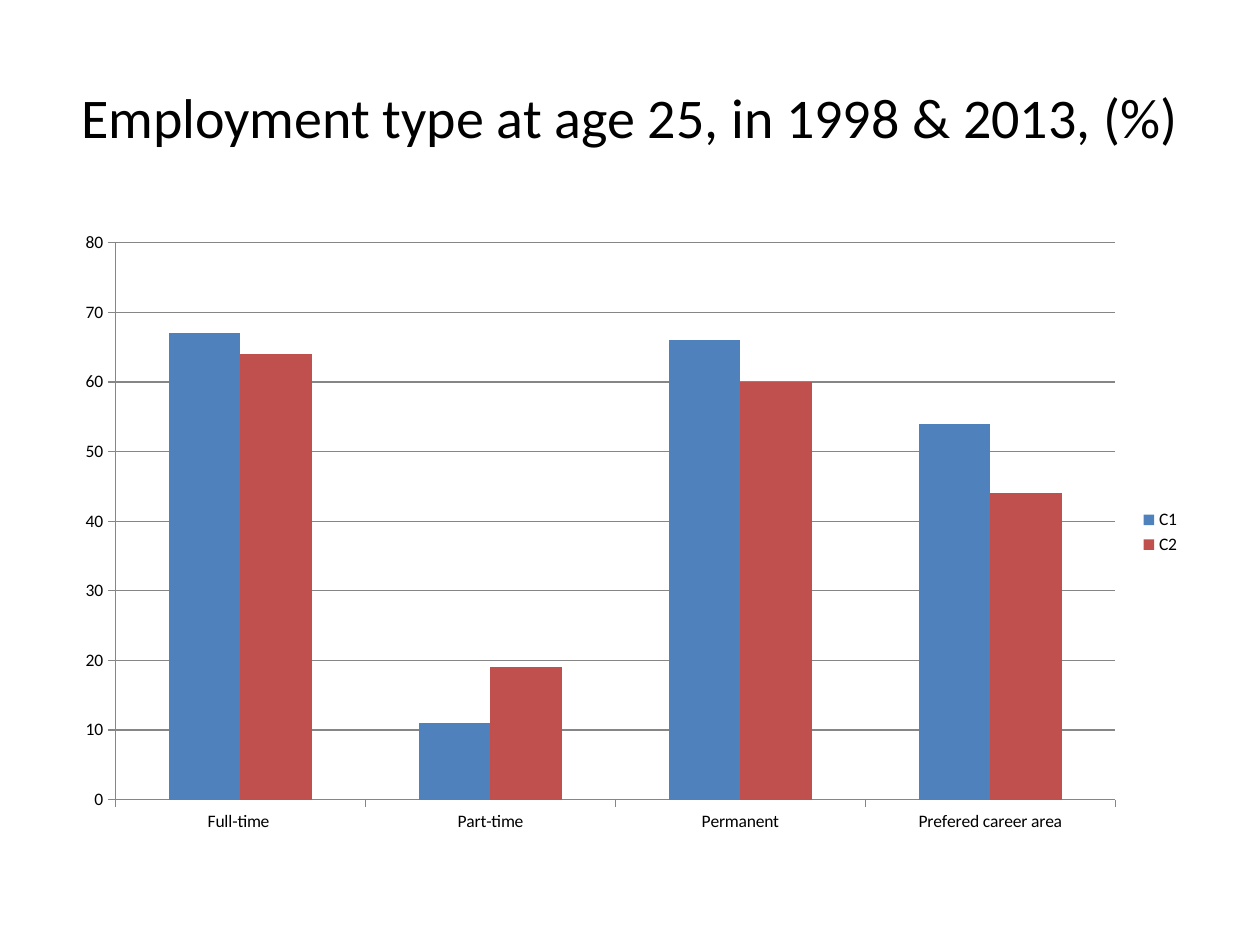
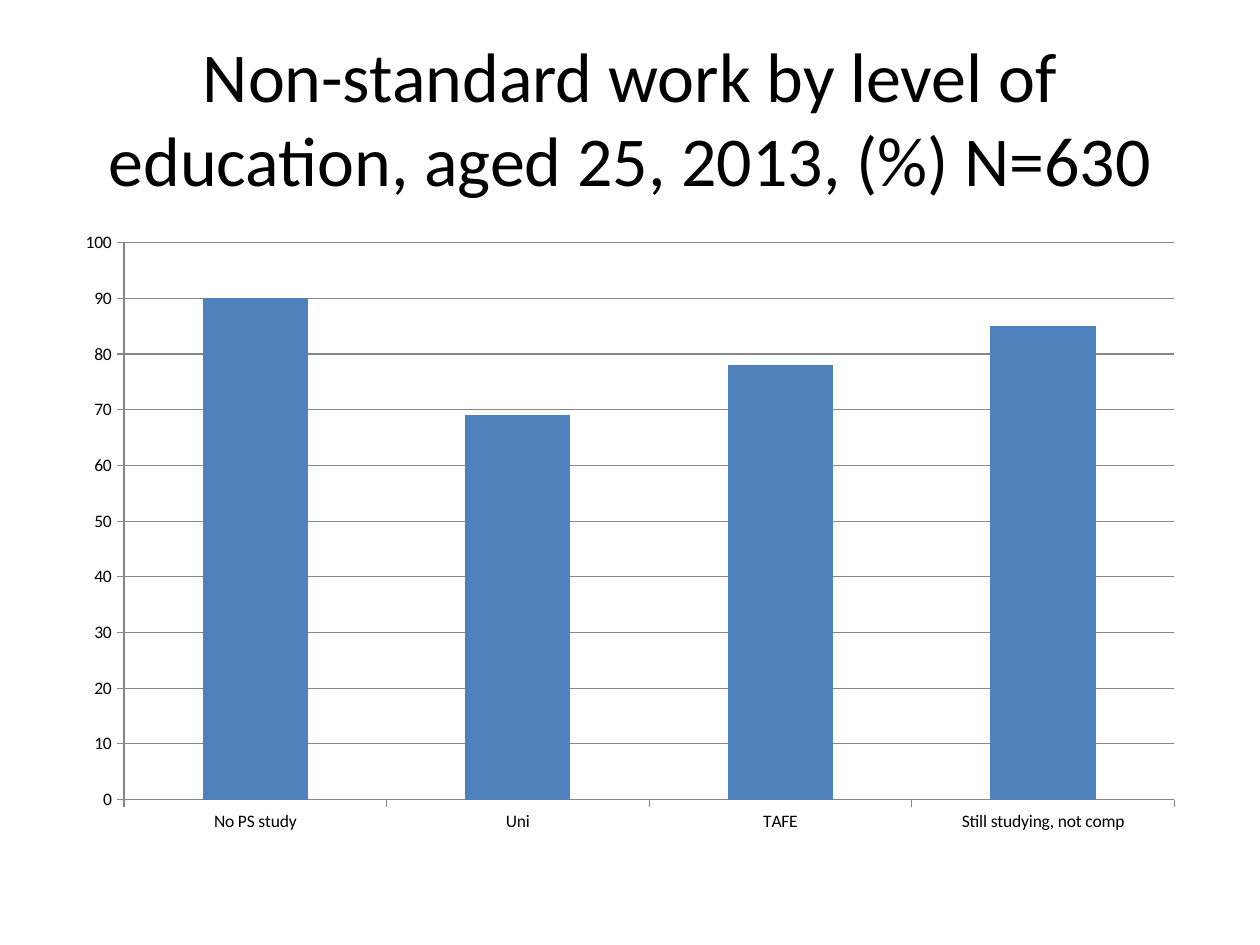
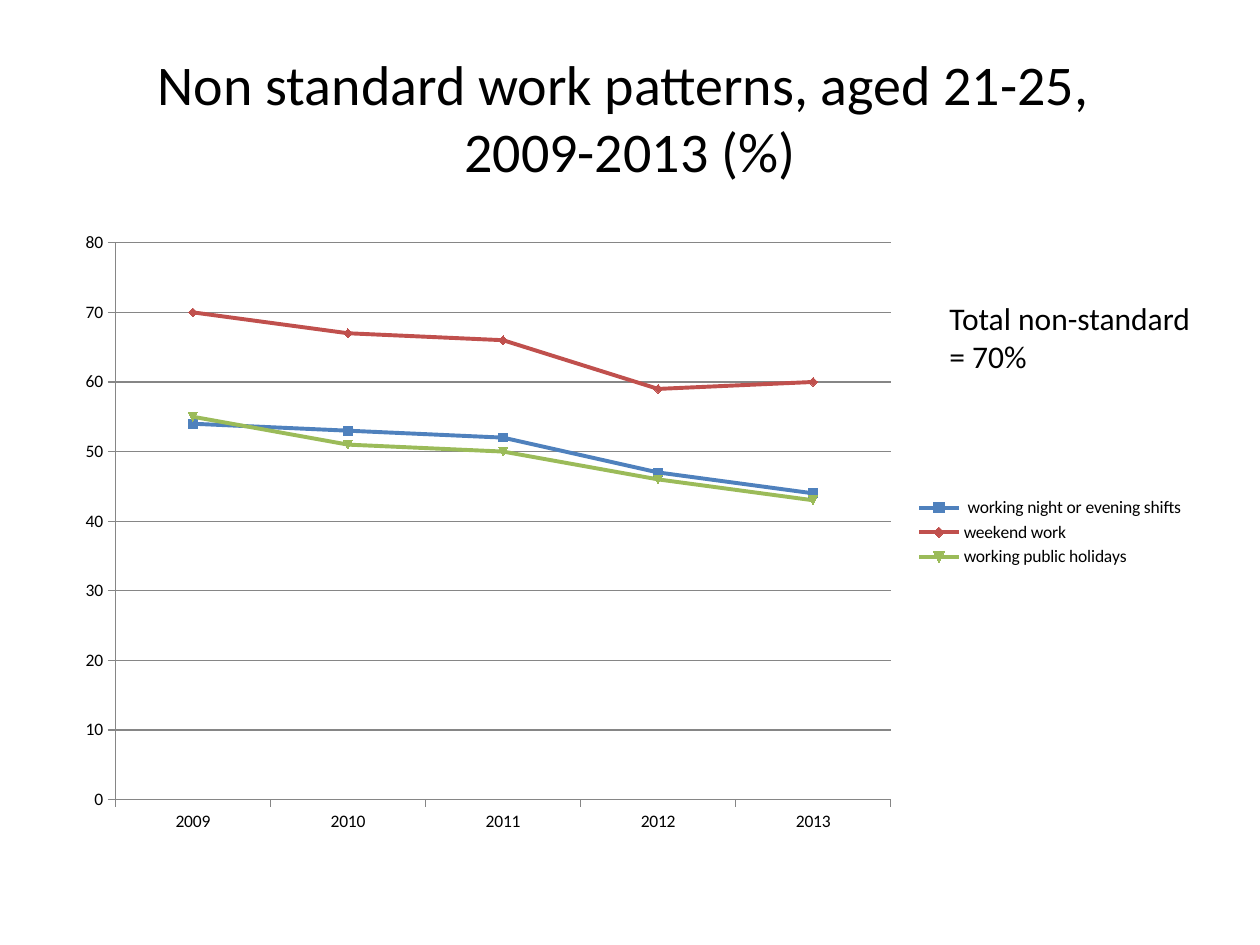
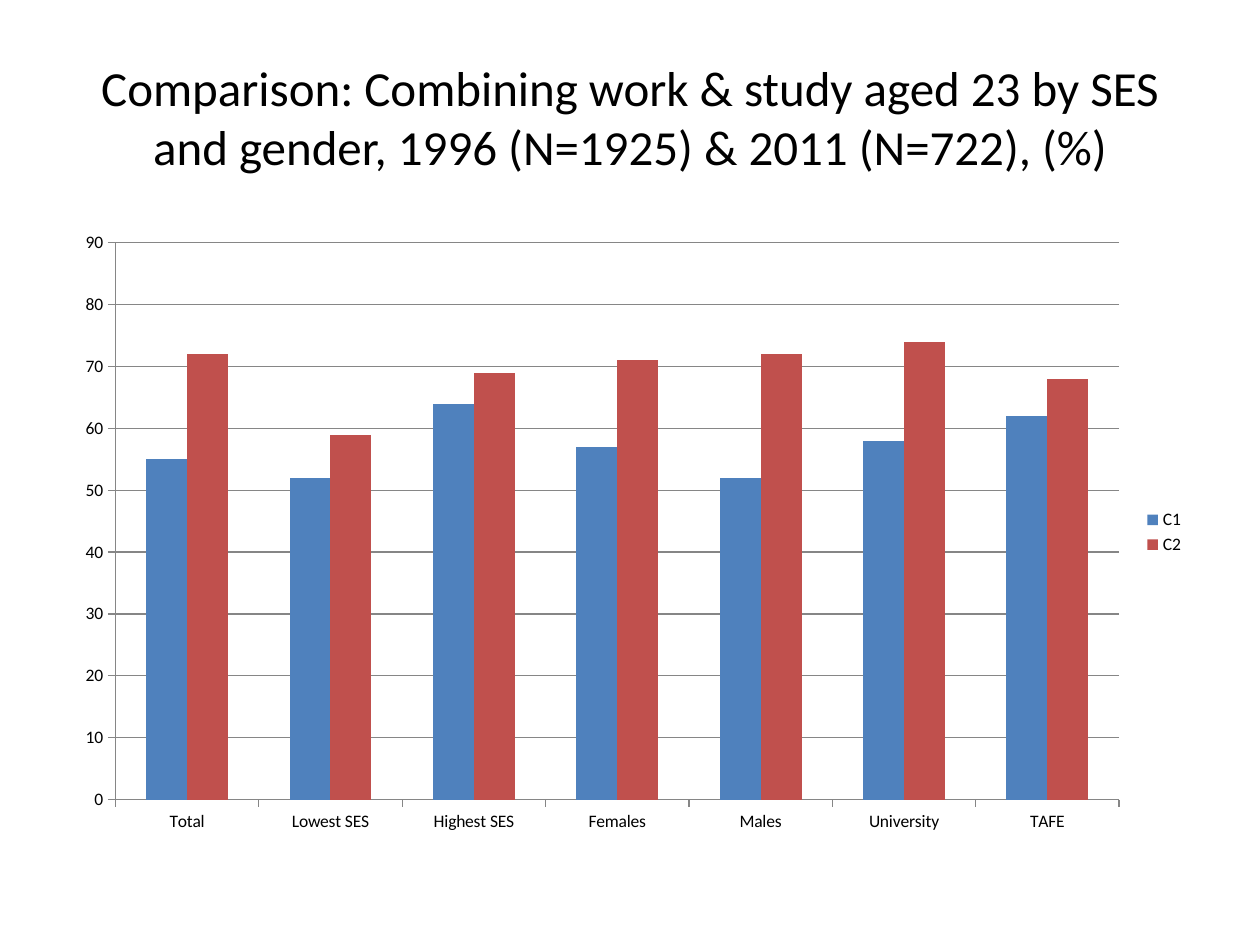
import pptx
import pptx.util
import pptx.chart.data
import pptx.dml.color
import pptx.enum.chart
import pptx.enum.text
from dataclasses import dataclass

Pt = pptx.util.Pt
Kind = pptx.enum.chart.XL_CHART_TYPE
Align = pptx.enum.text.PP_ALIGN
Anchor = pptx.enum.text.MSO_ANCHOR
Fit = pptx.enum.text.MSO_AUTO_SIZE

# Content: a vertical tab marks a line break
SLIDES = [
    dict(
        title="Employment type at age 25, in 1998 & 2013, (%)",
        size=32,
        kind=Kind.COLUMN_CLUSTERED,
        cats=["Full-time ", "Part-time", "Permanent", "Prefered career area"],
        series=[("C1 ", [67, 11, 66, 54]), ("C2 ", [64, 19, 60, 44])],
    ),
    dict(
        title="Non-standard work by level of education, aged 25, 2013, (%) N=630",
        size=40,
        kind=Kind.COLUMN_CLUSTERED,
        cats=["No PS study", "Uni", "TAFE", "Still studying, not comp"],
        series=[("Series 1", [90, 69, 78, 85])],
    ),
    dict(
        title="Non standard work patterns, aged 21-25, \v2009-2013 (%)",
        size=32,
        kind=Kind.LINE_MARKERS,
        cats=["2009", "2010", "2011", "2012", "2013"],
        series=[
            (" working night or evening shifts", [54, 53, 52, 47, 44]),
            ("weekend work", [70, 67, 66, 59, 60]),
            ("working public holidays", [55, 51, 50, 46, 43]),
        ],
        note="Total non-standard = 70%",
    ),
    dict(
        title="Comparison: Combining work & study aged 23 by SES and gender, "
              "1996 (N=1925) & 2011 (N=722), (%)",
        size=28,
        kind=Kind.COLUMN_CLUSTERED,
        cats=["Total", "Lowest SES", "Highest SES", "Females", "Males",
              "University", "TAFE"],
        series=[("C1", [55, 52, 64, 57, 52, 58, 62]),
                ("C2", [72, 59, 69, 71, 72, 74, 68])],
        top=90,
    ),
]


def rgb(code):
    return pptx.dml.color.RGBColor.from_string(code)


@dataclass(frozen=True)
class Theme:
    font: str = "Calibri"
    ink: str = "000000"
    paper: str = "FFFFFF"
    grid: str = "868686"
    hues: tuple = ("4F81BD", "C0504D", "9BBB59")
    label: float = 10
    note: float = 18
    thin: float = 0.75
    thick: float = 2.25
    gap: int = 150


THEME = Theme()

# Places in points: left, top, width, height
PAGE = (720, 540)
SIDE = 36
WIDE = PAGE[0] - 2 * SIDE
HEAD = (SIDE, 21.6, WIDE, 90)
PLOT = (SIDE, 126, WIDE, 356.4)
NOTE = (535.5, 167.5, 164.3, 50.9)


def place(box):
    return [Pt(n) for n in box]


def style(font, size):
    font.name = THEME.font
    font.size = Pt(size)
    font.color.rgb = rgb(THEME.ink)


def write(slide, text, box, *, size, align=Align.LEFT, anchor=Anchor.TOP,
          fit=Fit.NONE):
    frame = slide.shapes.add_textbox(*place(box)).text_frame
    frame.word_wrap = True
    frame.auto_size = fit
    frame.vertical_anchor = anchor
    frame.text = text
    for para in frame.paragraphs:
        para.alignment = align
        for run in para.runs:
            style(run.font, size)


def rule(line):
    line.color.rgb = rgb(THEME.grid)
    line.width = Pt(THEME.thin)


def paint(plot, lined):
    """Give each series its hue, as a line with markers or as a bar."""
    plot.vary_by_categories = False
    if not lined:
        plot.gap_width = THEME.gap
    for item, code in zip(plot.series, THEME.hues):
        hue = rgb(code)
        if lined:
            item.smooth = False
            item.format.line.color.rgb = hue
            item.format.line.width = Pt(THEME.thick)
            fill = item.marker.format.fill
            item.marker.format.line.color.rgb = hue
        else:
            fill = item.format.fill
        fill.solid()
        fill.fore_color.rgb = hue


def draw(slide, page):
    data = pptx.chart.data.CategoryChartData(number_format="General")
    data.categories = page["cats"]
    for name, vals in page["series"]:
        data.add_series(name, vals)
    chart = slide.shapes.add_chart(page["kind"], *place(PLOT), data).chart
    chart.has_title = False
    style(chart.font, THEME.label)

    # Axes and grid
    for axis in (chart.category_axis, chart.value_axis):
        axis.major_tick_mark = pptx.enum.chart.XL_TICK_MARK.OUTSIDE
        axis.minor_tick_mark = pptx.enum.chart.XL_TICK_MARK.NONE
        rule(axis.format.line)
    chart.value_axis.has_major_gridlines = True
    rule(chart.value_axis.major_gridlines.format.line)
    if "top" in page:
        chart.value_axis.maximum_scale = page["top"]

    # Legend only where there is more than one series
    chart.has_legend = len(page["series"]) > 1
    if chart.has_legend:
        chart.legend.position = pptx.enum.chart.XL_LEGEND_POSITION.RIGHT
        chart.legend.include_in_layout = False

    paint(chart.plots[0], page["kind"] == Kind.LINE_MARKERS)


def main():
    deck = pptx.Presentation()
    deck.slide_width, deck.slide_height = place(PAGE)
    blank = deck.slide_layouts[6]
    for page in SLIDES:
        slide = deck.slides.add_slide(blank)
        back = slide.background.fill
        back.solid()
        back.fore_color.rgb = rgb(THEME.paper)
        write(slide, page["title"], HEAD, size=page["size"],
              align=Align.CENTER, anchor=Anchor.MIDDLE)
        draw(slide, page)
        if "note" in page:
            write(slide, page["note"], NOTE, size=THEME.note,
                  fit=Fit.SHAPE_TO_FIT_TEXT)
    deck.save("out.pptx")


if __name__ == "__main__":
    main()
